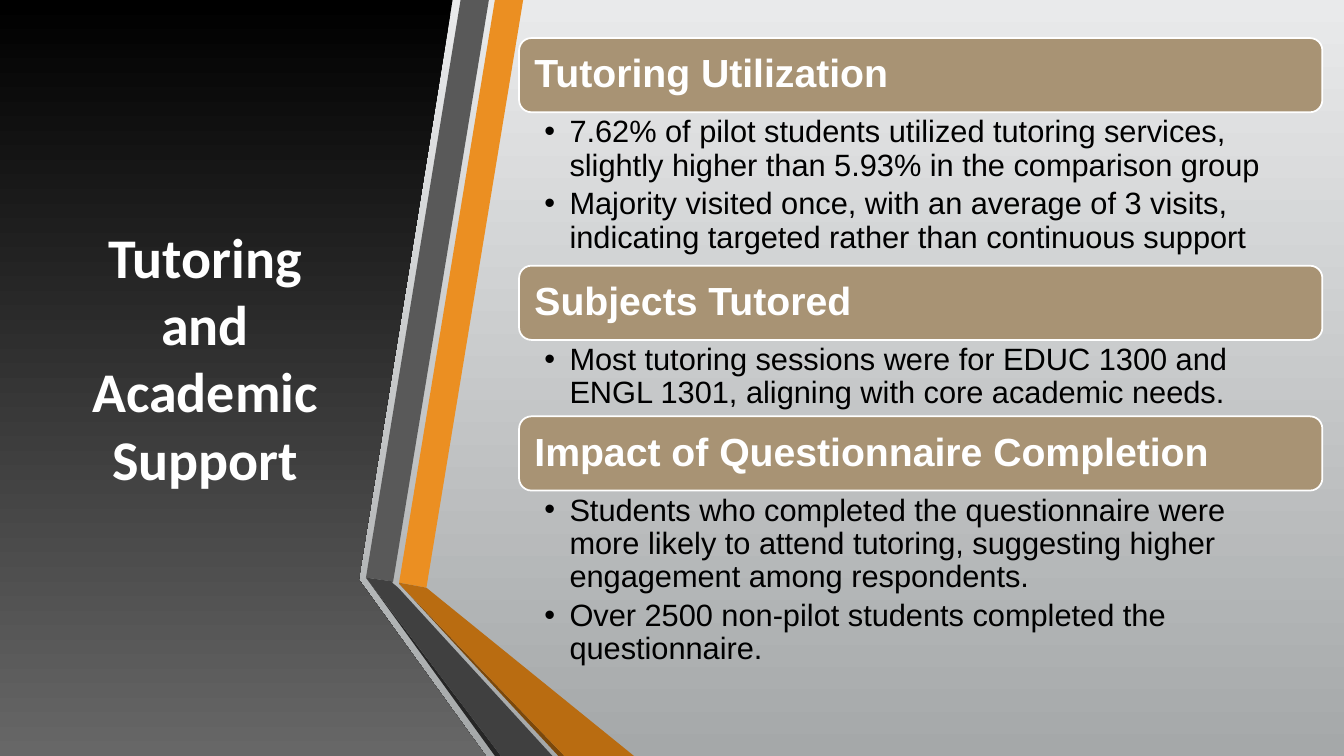
import pptx
import pptx.util
import pptx.dml.color
import pptx.enum.shapes
import pptx.enum.text
import pptx.oxml
import pptx.oxml.ns

Pt = pptx.util.Pt
Align = pptx.enum.text.PP_ALIGN
Anchor = pptx.enum.text.MSO_ANCHOR

# Content
TITLE = "Tutoring and Academic Support"
SECTIONS = [  # heading, list height, bullets
    ("Tutoring Utilization", 109.6, [
        "7.62% of pilot students utilized tutoring services, slightly higher "
        "than 5.93% in the comparison group",
        "Majority visited once, with an average of 3 visits, indicating "
        "targeted rather than continuous support",
    ]),
    ("Subjects Tutored", 54.6, [
        "Most tutoring sessions were for EDUC 1300 and ENGL 1301, aligning "
        "with core academic needs.",
    ]),
    ("Impact of Questionnaire Completion", 132.5, [
        "Students who completed the questionnaire were more likely to attend "
        "tutoring, suggesting higher engagement among respondents.",
        "Over 2500 non-pilot students completed the questionnaire.",
    ]),
]

# Decoration: outlines in points
PANEL = [(0, 0), (323.3, 0), (256.3, 414), (347, 540), (0, 540)]
RIBBONS = [
    ("EB8F22", [(285.1, 416.2), (304.6, 419.8), (373.7, 0), (353.5, 0)]),
    ("595959", [(349.2, 0), (329, 0), (261.4, 412.6), (280.8, 415.4)]),
    ("262626", [(261.4, 412.6), (353.5, 540), (357.8, 540)]),
    ("7B480B", [(285.1, 416.9), (398.9, 540), (403.2, 540)]),
    ("B96C11", [(285.1, 416.9), (403.2, 540), (452.9, 540), (304.6, 419.8),
                (285.1, 416.2)]),
    ("404040", [(394.6, 540), (284.4, 419.8), (280.1, 416.2), (280.8, 415.4),
                (261.4, 412.6), (357.8, 540)]),
]

# Layout and formats
TITLE_BOX = (42.5, 54, 208, 401.8)
SECTION_LEFT, SECTION_TOP, SECTION_WIDTH, HEADING_HEIGHT = 370.8, 27.2, 573.8, 53
TITLE_FONT = {"name": "Calibri", "size": Pt(40), "bold": True}
HEADING_FONT = {"name": "Arial", "size": Pt(28), "bold": True}
LIST_FONT = {"name": "Arial", "size": Pt(22), "bold": False}
TITLE_PARA = {"alignment": Align.CENTER, "line_spacing": 1.0}
HEADING_PARA = {"alignment": Align.LEFT, "line_spacing": 0.9}
LIST_PARA = {"alignment": Align.LEFT, "line_spacing": 0.9,
             "space_before": Pt(0), "space_after": Pt(4)}


def color(value):
    return pptx.dml.color.RGBColor.from_string(value)


def set_all(target, values):
    for name, value in values.items():
        setattr(target, name, value)


def place(shape, left, top, width, height):
    set_all(shape, {"left": Pt(left), "top": Pt(top),
                    "width": Pt(width), "height": Pt(height)})


def fill_gradient(fill, top_color, bottom_color):
    fill.gradient()
    fill.gradient_angle = 270
    for stop, value in zip(fill.gradient_stops, (top_color, bottom_color)):
        stop.color.rgb = color(value)


def add_outline(page, points):
    (first_x, first_y), *others = [(Pt(x), Pt(y)) for x, y in points]
    builder = page.shapes.build_freeform(first_x, first_y, scale=1.0)
    builder.add_line_segments(others, close=True)
    shape = builder.convert_to_shape()
    shape.shadow.inherit = False
    shape.line.fill.background()
    return shape


def write(shape, lines, font, font_color, para_format, anchor, insets):
    frame = shape.text_frame
    frame.word_wrap = True
    frame.auto_size = pptx.enum.text.MSO_AUTO_SIZE.NONE
    frame.vertical_anchor = anchor
    for side, inset in zip(("left", "top", "right", "bottom"), insets):
        setattr(frame, "margin_" + side, Pt(inset))
    for number, line in enumerate(lines):
        para = frame.add_paragraph() if number else frame.paragraphs[0]
        set_all(para, para_format)
        span = para.add_run()
        span.text = line
        set_all(span.font, font)
        span.font.color.rgb = color(font_color)


def add_bullets(shape):
    namespace = pptx.oxml.ns.nsdecls("a")
    for para in shape.text_frame.paragraphs:
        properties = para._p.get_or_add_pPr()
        properties.set("marL", str(Pt(18)))
        properties.set("indent", str(Pt(-18)))
        for tag in ('buFont %s typeface="Arial"', 'buChar %s char="•"'):
            properties.append(pptx.oxml.parse_xml(f"<a:{tag % namespace}/>"))


def main():
    deck = pptx.Presentation()
    deck.slide_width, deck.slide_height = Pt(960), Pt(540)
    page = deck.slides.add_slide(deck.slide_layouts.get_by_name("Comparison"))
    fill_gradient(page.background.fill, "E9EAEB", "A5A8A9")
    title, *bodies = list(page.placeholders)

    # Dark panel behind the title, then the ribbons
    panel = add_outline(page, PANEL)
    fill_gradient(panel.fill, "000000", "676767")
    title.element.addprevious(panel.element)
    for ribbon_color, points in RIBBONS:
        ribbon = add_outline(page, points)
        ribbon.fill.solid()
        ribbon.fill.fore_color.rgb = color(ribbon_color)

    # Title
    place(title, *TITLE_BOX)
    write(title, [TITLE], TITLE_FONT, "FFFFFF", TITLE_PARA, Anchor.MIDDLE,
          (7.2, 3.6, 7.2, 3.6))

    # Stacked sections: heading bar with its list below
    top = SECTION_TOP
    for body, (heading, list_height, bullets) in zip(bodies, SECTIONS):
        bar = page.shapes.add_shape(
            pptx.enum.shapes.MSO_SHAPE.ROUNDED_RECTANGLE, Pt(SECTION_LEFT),
            Pt(top), Pt(SECTION_WIDTH), Pt(HEADING_HEIGHT))
        bar.shadow.inherit = False
        bar.fill.solid()
        bar.fill.fore_color.rgb = color("A89374")
        bar.line.color.rgb = color("FFFFFF")
        bar.line.width = Pt(1.25)
        write(bar, [heading], HEADING_FONT, "FFFFFF", HEADING_PARA,
              Anchor.MIDDLE, (8.4, 8.4, 8.4, 8.4))
        top += HEADING_HEIGHT
        place(body, SECTION_LEFT, top, SECTION_WIDTH, list_height)
        write(body, bullets, LIST_FONT, "000000", LIST_PARA, Anchor.TOP,
              (18, 2.8, 16, 2.8))
        add_bullets(body)
        top += list_height

    # Remove placeholders left without text
    for spare in list(page.placeholders):
        if not spare.text_frame.text:
            spare.element.getparent().remove(spare.element)

    deck.save("out.pptx")


if __name__ == "__main__":
    main()
